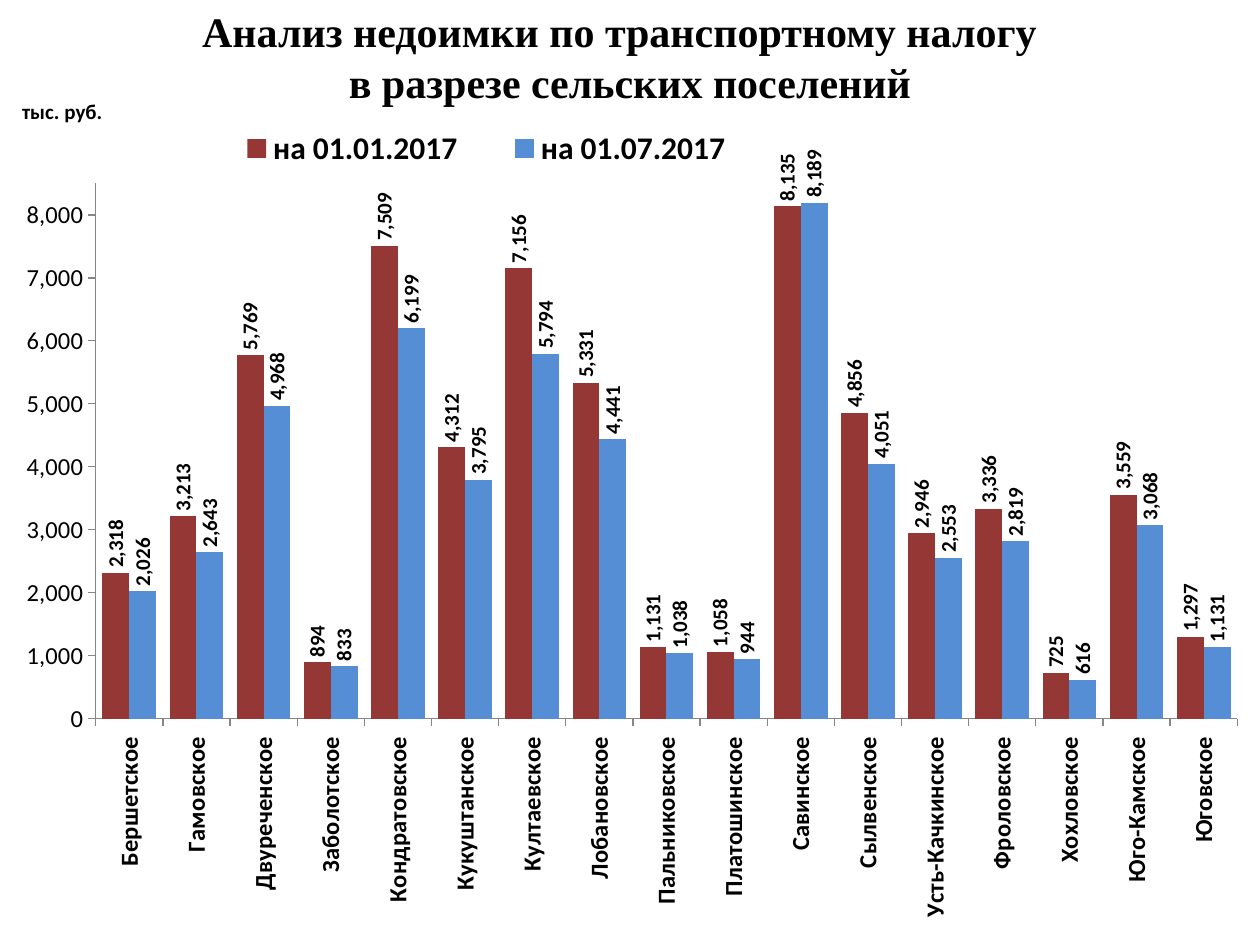
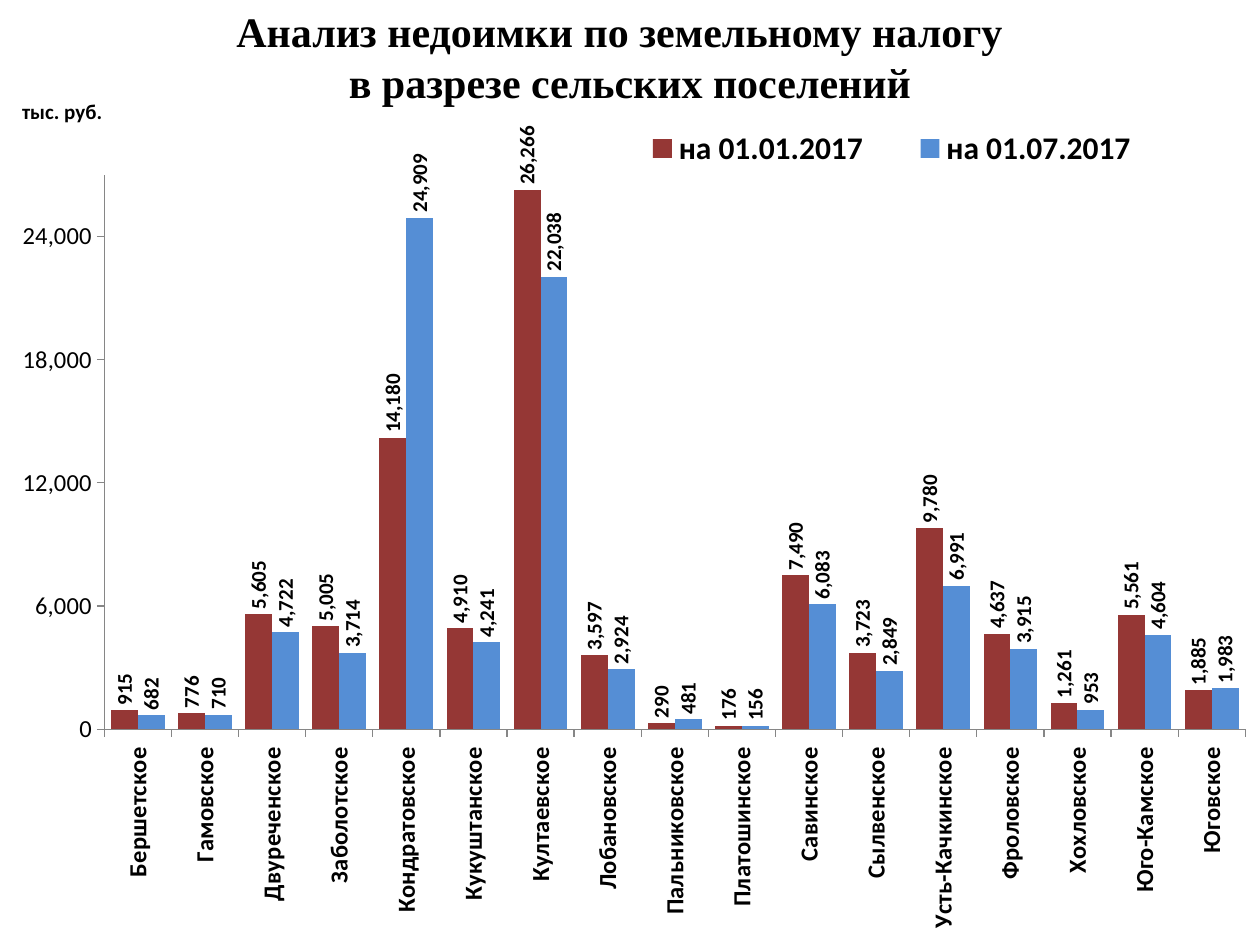
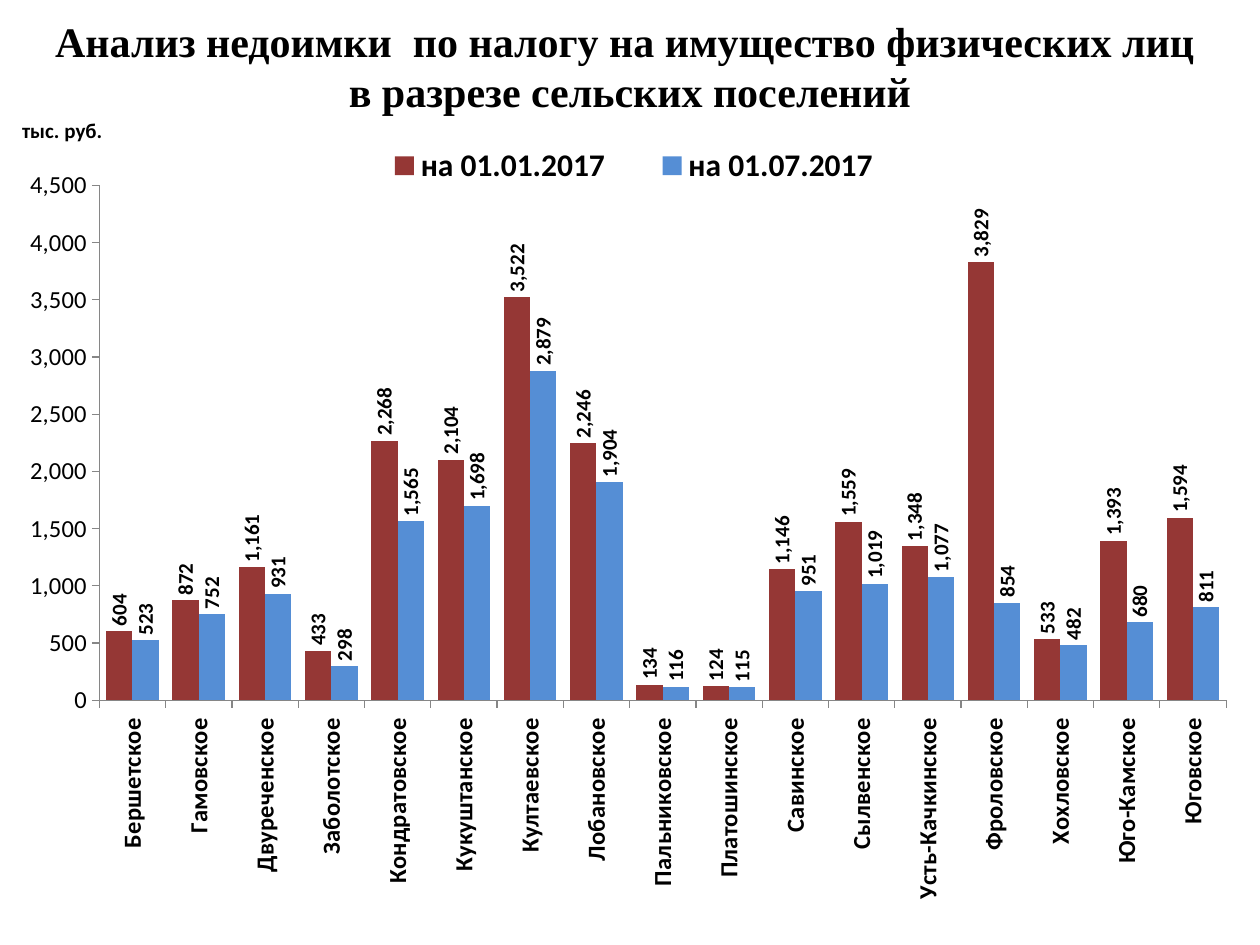
from pptx import Presentation
from pptx.chart.data import CategoryChartData as Data
from pptx.dml.color import RGBColor
from pptx.enum.chart import XL_CHART_TYPE as Kind, XL_LABEL_POSITION as Spot
from pptx.enum.chart import XL_LEGEND_POSITION as Side, XL_TICK_MARK as Tick
from pptx.enum.text import MSO_ANCHOR as Anchor, MSO_AUTO_SIZE as Fit, PP_ALIGN as Align
from pptx.oxml.ns import qn
from pptx.util import Pt
from lxml.etree import SubElement

BLACK = RGBColor(0, 0, 0)
GREY = RGBColor(0x86, 0x86, 0x86)
RED = RGBColor(0x95, 0x37, 0x35)
BLUE = RGBColor(0x55, 0x8E, 0xD5)

UNIT = "тыс. руб."
COUNT = "#,##0"
DATES = [("на 01.01.2017", RED), ("на 01.07.2017", BLUE)]
TOWNS = [
    "Бершетское", "Гамовское", "Двуреченское", "Заболотское", "Кондратовское",
    "Кукуштанское", "Култаевское", "Лобановское", "Пальниковское",
    "Платошинское", "Савинское", "Сылвенское", "Усть-Качкинское",
    "Фроловское", "Хохловское", "Юго-Камское", "Юговское",
]
TAIL = "в разрезе сельских поселений"
HIGH = {"head": (21, 22), "top": 32}
LOW = {"head": (15, 45), "top": 43}
BASE = 531

TAXES = [
    {
        "title": "Анализ недоимки по транспортному налогу  ", **HIGH,
        "scale": {"maximum_scale": 8500, "major_unit": 1000}, "gap": 50,
        "plot": (0.065, 0.146, 0.928, 0.613), "key": 0.15,
        "sums": [
            [2318, 3213, 5769, 894, 7509, 4312, 7156, 5331, 1131, 1058, 8135,
             4856, 2946, 3336, 725, 3559, 1297],
            [2026, 2643, 4968, 833, 6199, 3795, 5794, 4441, 1038, 944, 8189,
             4051, 2553, 2819, 616, 3068, 1131],
        ],
    },
    {
        "title": "Анализ недоимки по земельному налогу  ", **HIGH,
        "scale": {"maximum_scale": 27000, "major_unit": 6000}, "gap": 50,
        "plot": (0.076, 0.136, 0.928, 0.635), "key": 0.48,
        "sums": [
            [915, 776, 5605, 5005, 14180, 4910, 26266, 3597, 290, 176, 7490,
             3723, 9780, 4637, 1261, 5561, 1885],
            [682, 710, 4722, 3714, 24909, 4241, 22038, 2924, 481, 156, 6083,
             2849, 6991, 3915, 953, 4604, 1983],
        ],
    },
    {
        "title": "Анализ недоимки  по налогу на имущество физических лиц ", **LOW,
        "scale": {}, "gap": 52,
        "plot": (0.068, 0.129, 0.916, 0.603), "key": 0.27,
        "sums": [
            [604, 872, 1161, 433, 2268, 2104, 3522, 2246, 134, 124, 1146,
             1559, 1348, 3829, 533, 1393, 1594],
            [523, 752, 931, 298, 1565, 1698, 2879, 1904, 116, 115, 951,
             1019, 1077, 854, 482, 680, 811],
        ],
    },
]


def put(item, **vals):
    """Set each given attribute on the item."""
    for name, val in vals.items():
        setattr(item, name, val)


def style(font, size, bold, face="Calibri"):
    """Format a font in black."""
    put(font, size=Pt(size), bold=bold, name=face)
    font.color.rgb = BLACK


def place(root, host, follow, spots, inner=False):
    """Give a chart part a fixed place, in shares of the chart."""
    part = root.xpath(f".//{host}")[0]
    for old in part.findall(qn("c:layout")):
        part.remove(old)
    frame = SubElement(part, qn("c:layout"))
    part.find(qn(follow)).addprevious(frame)
    box = SubElement(frame, qn("c:manualLayout"))
    rules = [("layoutTarget", "inner")] if inner else []
    rules += [("xMode", "edge"), ("yMode", "edge"), *zip("xywh", spots)]
    for tag, val in rules:
        SubElement(box, qn(f"c:{tag}")).set("val", str(val))


def draw_head(slide, tax):
    """Write the two-line title."""
    head = slide.shapes.title
    top, high = tax["head"]
    put(head, left=Pt(14), top=Pt(top), width=Pt(692), height=Pt(high))
    frame = head.text_frame
    put(frame, text=tax["title"] + "\v" + TAIL, word_wrap=True,
        auto_size=Fit.NONE, vertical_anchor=Anchor.MIDDLE)
    para = frame.paragraphs[0]
    para.alignment = Align.CENTER
    for run in para.runs:
        style(run.font, 24, True, "Times New Roman")


def draw_axes(chart, tax):
    """Format both axes and the unit label."""
    towns, sums = chart.category_axis, chart.value_axis
    for axis, bold in ((towns, True), (sums, False)):
        put(axis, has_major_gridlines=False, major_tick_mark=Tick.OUTSIDE,
            minor_tick_mark=Tick.NONE)
        style(axis.tick_labels.font, 14, bold)
        axis.format.line.color.rgb = GREY
        axis.format.line.width = Pt(0.75)
    put(sums, minimum_scale=0, **tax["scale"])
    put(sums.tick_labels, number_format=COUNT, number_format_is_linked=False)
    frame = sums.axis_title.text_frame
    frame.text = UNIT
    style(frame.paragraphs[0].runs[0].font, 12, True)


def draw_bars(chart, tax):
    """Format the bars and their values."""
    plot = chart.plots[0]
    put(plot, gap_width=tax["gap"], overlap=0, vary_by_categories=False)
    for bars, (_, tint) in zip(plot.series, DATES):
        bars.format.fill.solid()
        bars.format.fill.fore_color.rgb = tint
        tags = bars.data_labels
        put(tags, show_value=True, number_format=COUNT,
            number_format_is_linked=False, position=Spot.OUTSIDE_END)
        style(tags.font, 12, True)


def draw_chart(slide, tax):
    """Add the chart of arrears by settlement."""
    data = Data(number_format=COUNT)
    data.categories = [f"{town} " for town in TOWNS]
    for (date, _), sums in zip(DATES, tax["sums"]):
        data.add_series(date, sums)
    top = tax["top"]
    chart = slide.shapes.add_chart(
        Kind.COLUMN_CLUSTERED, Pt(9), Pt(top), Pt(703), Pt(BASE - top), data).chart
    put(chart, has_title=False, has_legend=True)
    style(chart.font, 18, False)
    put(chart.legend, position=Side.BOTTOM, include_in_layout=False)
    style(chart.legend.font, 18, True)
    draw_axes(chart, tax)
    draw_bars(chart, tax)
    root = chart.element
    place(root, "c:plotArea", "c:barChart", tax["plot"], inner=True)
    place(root, "c:legend", "c:overlay", (tax["key"], 0.076, 0.465, 0.06))
    place(root, "c:valAx/c:title", "c:overlay", (0.002, 0.043))
    turns = {"c:valAx/c:title": 0, "c:catAx/c:txPr": -5400000, "c:dLbls": -5400000}
    for host, turn in turns.items():
        for body in root.xpath(f".//{host}//a:bodyPr"):
            body.set("rot", str(turn))
            body.set("vert", "horz")


def main():
    """Build the deck."""
    deck = Presentation()
    put(deck, slide_width=Pt(720), slide_height=Pt(540))
    for tax in TAXES:
        slide = deck.slides.add_slide(deck.slide_layouts[5])
        draw_head(slide, tax)
        draw_chart(slide, tax)
    deck.save("out.pptx")


if __name__ == "__main__":
    main()
